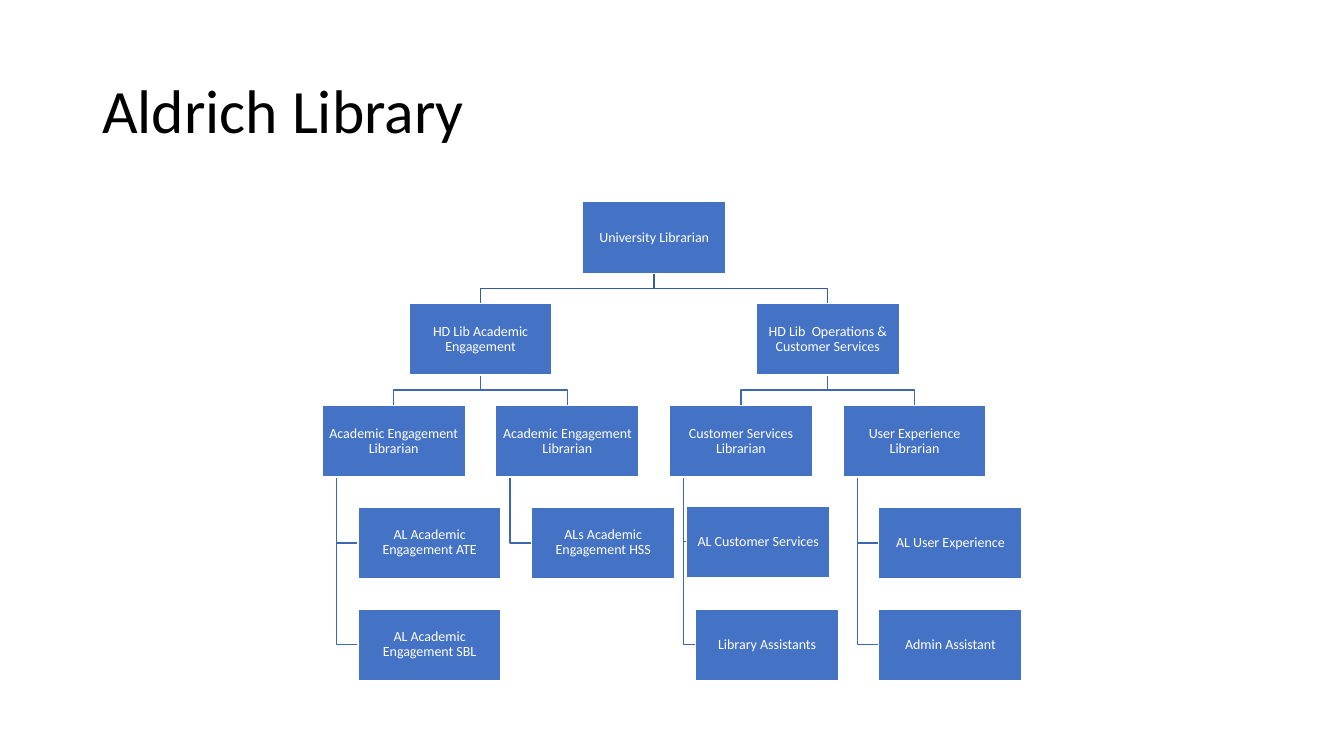
"""Build the Aldrich Library organisation chart."""
from pptx import Presentation
from pptx import util as u
from pptx.dml.color import RGBColor
from pptx.enum import shapes, text

TITLE = "Aldrich Library"
ROOT = "University Librarian"
HEADS = [
    ("HD Lib Academic Engagement", (0, 1)),
    ("HD Lib  Operations & Customer Services", (2, 3)),
]
# Each team: librarian, then staff as (name, indent, rise).
TEAMS = [
    ("Academic Engagement Librarian",
     [("AL Academic Engagement ATE", 25.6, 0), ("AL Academic Engagement SBL", 25.6, 0)]),
    ("Academic Engagement Librarian",
     [("ALs Academic Engagement HSS", 25.6, 0)]),
    ("Customer Services Librarian",
     [("AL Customer Services", 12.3, 0.9), ("Library Assistants", 18.7, 0)]),
    ("User Experience Librarian",
     [("AL User Experience", 25.6, 0), ("Admin Assistant", 25.6, 0)]),
]

FONT = "Calibri"
BLUE, WHITE, BLACK = "4472C4", "FFFFFF", "000000"
TOP_LINE, LOWER_LINE = "365B9D", "3E67B2"
LEFT, TOP = 230.1, 144.1
BOX_WIDTH, BOX_HEIGHT = 102.3, 51.1
COLUMN_STEP, ROW_STEP = 124, 72.7
TRUNK_INDENT = 10.2


def colour(value):
    return RGBColor.from_string(value)


def place(column, row):
    return LEFT + column * COLUMN_STEP, TOP + row * ROW_STEP


def write(shape, words, size, ink, align, inset=None):
    frame = shape.text_frame
    frame.word_wrap = True
    frame.vertical_anchor = text.MSO_ANCHOR.MIDDLE
    if inset is not None:
        frame.margin_left = frame.margin_right = u.Pt(inset)
        frame.margin_top = frame.margin_bottom = u.Pt(inset)
    para = frame.paragraphs[0]
    para.text = words
    para.alignment = align
    para.line_spacing = 0.9
    para.font.name = FONT
    para.font.size = u.Pt(size)
    para.font.color.rgb = colour(ink)


def draw_box(page, words, left, top):
    box = page.shapes.add_shape(shapes.MSO_SHAPE.RECTANGLE, u.Pt(left), u.Pt(top),
                                u.Pt(BOX_WIDTH), u.Pt(BOX_HEIGHT))
    box.shadow.inherit = False
    box.fill.solid()
    box.fill.fore_color.rgb = colour(BLUE)
    box.line.color.rgb = colour(WHITE)
    box.line.width = u.Pt(1)
    write(box, words, 10, WHITE, text.PP_ALIGN.CENTER, 0.5)


def draw_path(page, points, ink):
    start, *rest = [(u.Pt(x), u.Pt(y)) for x, y in points]
    builder = page.shapes.build_freeform(*start)
    builder.add_line_segments(rest, close=False)
    path = builder.convert_to_shape()
    path.shadow.inherit = False
    path.fill.background()
    path.line.color.rgb = colour(ink)
    path.line.width = u.Pt(1)


def draw_branch(page, parent, child, ink):
    start_x, end_x = parent[0] + BOX_WIDTH / 2, child[0] + BOX_WIDTH / 2
    start_y, end_y = parent[1] + BOX_HEIGHT, child[1]
    middle = (start_y + end_y) / 2
    draw_path(page, [(start_x, start_y), (start_x, middle), (end_x, middle), (end_x, end_y)], ink)


def draw_hook(page, parent, child):
    trunk = parent[0] + TRUNK_INDENT
    level = child[1] + BOX_HEIGHT / 2
    draw_path(page, [(trunk, parent[1] + BOX_HEIGHT), (trunk, level), (child[0], level)],
              LOWER_LINE)


def main():
    deck = Presentation()
    deck.slide_width, deck.slide_height = u.Pt(960), u.Pt(540)
    page = deck.slides.add_slide(deck.slide_layouts[6])
    title = page.shapes.add_textbox(u.Pt(66), u.Pt(28.75), u.Pt(828), u.Pt(104.4))
    write(title, TITLE, 44, BLACK, text.PP_ALIGN.LEFT)

    root = place((len(TEAMS) - 1) / 2, 0)
    boxes = [(ROOT, root)]
    for name, columns in HEADS:
        head = place(sum(columns) / len(columns), 1)
        boxes.append((name, head))
        draw_branch(page, root, head, TOP_LINE)
        for column in columns:
            librarian, staff = TEAMS[column]
            lead = place(column, 2)
            boxes.append((librarian, lead))
            draw_branch(page, head, lead, LOWER_LINE)
            for row, (member, indent, rise) in enumerate(staff, 3):
                left, top = place(column, row)
                spot = left + indent, top - rise
                boxes.append((member, spot))
                draw_hook(page, lead, spot)

    for words, spot in boxes:
        draw_box(page, words, *spot)
    deck.save("out.pptx")


if __name__ == "__main__":
    main()
